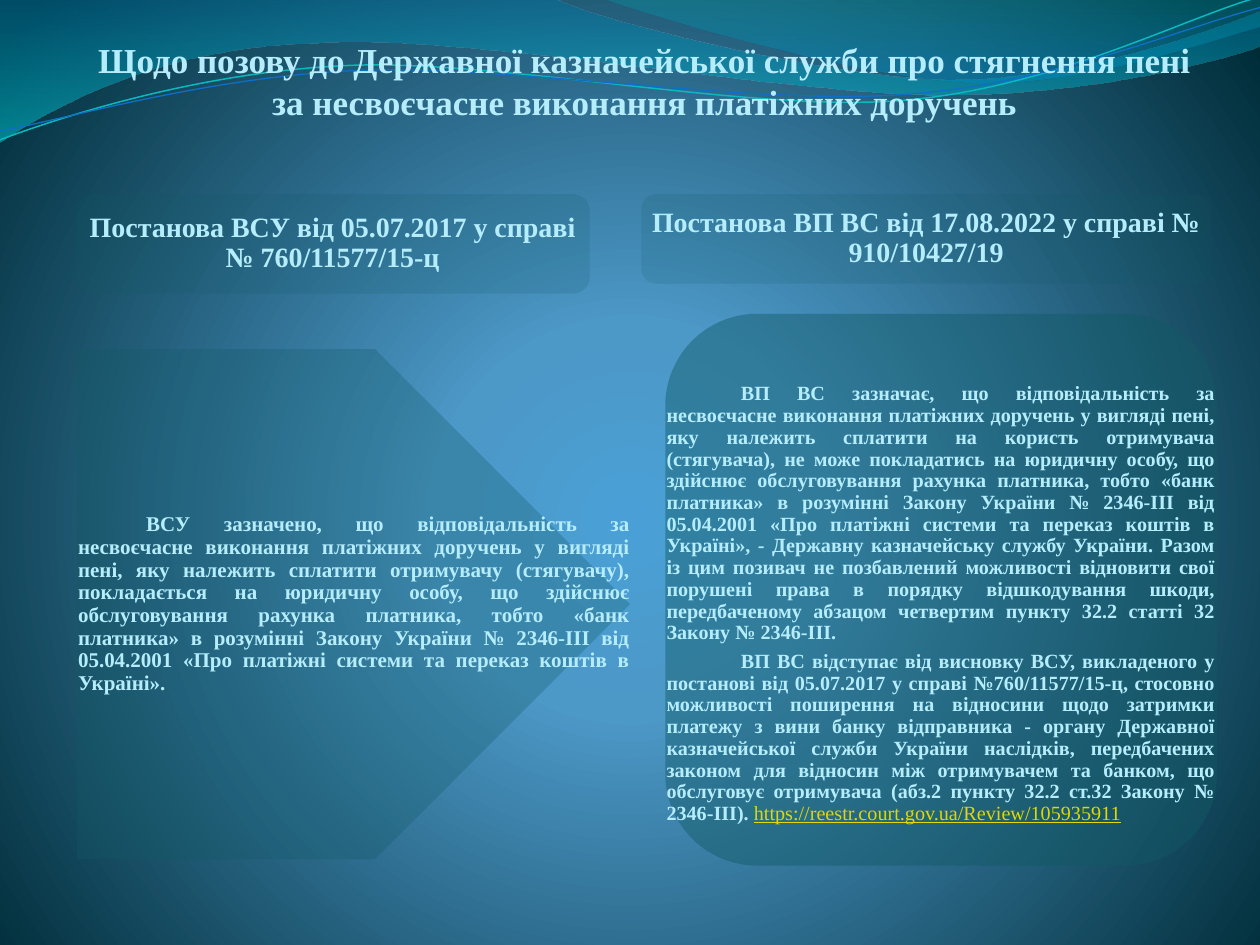
from lxml.etree import SubElement
from pptx import Presentation
from pptx.dml.color import RGBColor
from pptx.enum.shapes import MSO_SHAPE
from pptx.enum.text import MSO_ANCHOR, PP_ALIGN
from pptx.oxml.ns import qn
from pptx.util import Inches, Pt

FONT = "Times New Roman"
COLORS = {"text": "B5EDFD", "link": "E2D700", "panel": "115964",
          "teal_line": "0AB8BF", "blue_line": "0F6FC6"}

TITLE = ("Щодо позову до Державної казначейської служби про стягнення пені "
         "за несвоєчасне виконання платіжних доручень")
HEADERS = [
    ("Постанова ВСУ від 05.07.2017 у справі № 760/11577/15-ц", (0.6, 1.54, 4.08, 0.79), 17),
    ("Постанова ВП ВС від 17.08.2022 у справі № 910/10427/19", (5.09, 1.54, 4.52, 0.71), 16),
]
OLD_POSITION = [[("\t", "text"), (
    "ВСУ зазначено, що відповідальність за несвоєчасне виконання платіжних доручень у вигляді "
    "пені, яку належить сплатити отримувачу (стягувачу), покладається на юридичну особу, що "
    "здійснює обслуговування рахунка платника, тобто «банк платника» в розумінні Закону України "
    "№ 2346-III від 05.04.2001 «Про платіжні системи та переказ коштів в Україні».", "text")]]
NEW_POSITION = [
    [("\t", "text"),
     ("ВП ВС зазначає, що відповідальність за несвоєчасне виконання платіжних доручень у вигляді "
      "пені, яку належить сплатити на користь отримувача (стягувача), не може покладатись на "
      "юридичну особу, що здійснює обслуговування рахунка платника, тобто «банк платника» в "
      "розумінні Закону України № 2346-III від 05.04.2001 «Про платіжні системи та переказ коштів "
      "в Україні», - Державну казначейську службу України. Разом із цим позивач не позбавлений "
      "можливості відновити свої порушені права в порядку відшкодування шкоди, передбаченому "
      "абзацом четвертим пункту 32.2 статті 32 Закону № 2346-III.", "text")],
    [("\tВП ВС відступає від висновку ВСУ, викладеного у постанові від 05.07.2017 у справі "
      "№760/11577/15-ц, стосовно можливості поширення на відносини щодо затримки платежу з вини "
      "банку відправника - органу Державної казначейської служби України наслідків, передбачених "
      "законом для відносин між отримувачем та банком, що обслуговує отримувача (абз.2 пункту "
      "32.2 ст.32 Закону № 2346-III). ", "text"),
     ("https://reestr.court.gov.ua/Review/105935911", "link")],
]
PANELS = [
    (OLD_POSITION, MSO_SHAPE.PENTAGON, (0.61, 2.77, 4.39, 4.05), 29,
     dict(size=12, tab=0.54, insets=(0.01, 0.01, 0, 0.01))),
    (NEW_POSITION, MSO_SHAPE.FLOWCHART_ALTERNATE_PROCESS, (5.28, 2.49, 4.38, 4.38), 44,
     dict(size=11.5, tab=0.59, insets=(0.01, 0.25, 0.02, 0.02))),
]

BACKGROUND = [(0, "4AA0D6", 100), (25, "4C98C7", 100), (100, "002C38", 100)]
WAVES = [
    ([(0, 0), (4.4, -0.01),
      (4.76, 0.17, 6.64, 0.63, 7.58, 0.63), (8.53, 0.63, 9.58, 0.26, 10, 0.09),
      (10.01, 0.36),
      (9.83, 0.44, 8.7, 0.76, 7.46, 0.75), (6.22, 0.75, 3.82, 0.28, 2.57, 0.34),
      (1.29, 0.36, 0.46, 0.83, -0.01, 1.13), (0, 0)],
     [(0, "0074A1", 45), (100, "00C6CF", 55)]),
    ([(4.79, -0.01),
      (5.09, 0.11, 6.82, 0.62, 7.69, 0.65), (8.56, 0.69, 9.61, 0.32, 10, 0.21),
      (10, 0), (4.79, -0.01)],
     [(0, "00A1A9", 30), (80, "008BBF", 45)]),
]
RIBBONS = [
    ([(0, 1.11), (0.48, 0.93, 1.58, 0.57, 2.77, 0.52), (3.95, 0.47, 5.93, 0.89, 7.13, 0.8),
      (8.33, 0.71, 9.38, 0.15, 9.98, -0.02)], "teal_line", 0.85),
    ([(0, 1.04), (0.47, 0.96, 1.64, 0.61, 2.83, 0.56), (4.03, 0.51, 5.97, 0.84, 7.17, 0.75),
      (8.36, 0.67, 9.41, 0.21, 10, 0.06)], "blue_line", 0.75),
]


def rgb(name):
    return RGBColor.from_string(COLORS[name])


def set_alpha(color_element, percent):
    SubElement(color_element, qn("a:alpha"), val=str(percent * 1000))


def set_gradient(fill, stops, focus=None):
    fill.gradient()
    gradient = fill._xPr.find(qn("a:gradFill"))
    for child in list(gradient):
        gradient.remove(child)
    stop_list = SubElement(gradient, qn("a:gsLst"))
    for position, color, alpha in stops:
        stop = SubElement(stop_list, qn("a:gs"), pos=str(position * 1000))
        color_element = SubElement(stop, qn("a:srgbClr"), val=color)
        if alpha < 100:
            set_alpha(color_element, alpha)
    if focus:
        circle = SubElement(gradient, qn("a:path"), path="circle")
        SubElement(circle, qn("a:fillToRect"),
                   {side: str(value * 1000) for side, value in focus.items()})
    else:
        SubElement(gradient, qn("a:lin"), ang="5400000", scaled="0")


def add_curve(slide, steps, close):
    points = [(Inches(x), Inches(y)) for step in steps for x, y in zip(step[::2], step[1::2])]
    builder = slide.shapes.build_freeform(*points[0])
    builder.add_line_segments(points[1:], close=close)
    curve = builder.convert_to_shape()
    curve.shadow.inherit = False
    segments = iter(list(curve._element.iter(qn("a:lnTo"))))
    for step in steps[1:]:
        first = next(segments)
        if len(step) == 6:
            outline = first.getparent()
            bezier = outline.makeelement(qn("a:cubicBezTo"))
            outline.replace(first, bezier)
            bezier.append(first[0])
            for _ in range(2):
                control = next(segments)
                bezier.append(control[0])
                outline.remove(control)
    return curve


def add_panel(slide, kind, box, alpha):
    panel = slide.shapes.add_shape(kind, *map(Inches, box))
    panel.shadow.inherit = False
    panel.line.fill.background()
    panel.fill.solid()
    panel.fill.fore_color.rgb = rgb("panel")
    set_alpha(panel.fill._xPr.find(qn("a:solidFill"))[0], alpha)
    return panel


def write_text(frame, paragraphs, size, align=PP_ALIGN.CENTER, anchor=MSO_ANCHOR.MIDDLE,
               insets=(0.03, 0.03, 0.03, 0.03), spacing=0.9, after=0, tab=None):
    frame.word_wrap = True
    frame.vertical_anchor = anchor
    frame.margin_left, frame.margin_top, frame.margin_right, frame.margin_bottom = map(Inches, insets)
    for index, runs in enumerate(paragraphs):
        paragraph = frame.add_paragraph() if index else frame.paragraphs[0]
        paragraph.alignment = align
        paragraph.line_spacing = spacing
        paragraph.space_before = Pt(0)
        paragraph.space_after = Pt(after)
        if tab:
            tabs = SubElement(paragraph._p.get_or_add_pPr(), qn("a:tabLst"))
            SubElement(tabs, qn("a:tab"), pos=str(Inches(tab)), algn="l")
        for text, color in runs:
            run = paragraph.add_run()
            run.text = text
            run.font.name = FONT
            run.font.size = Pt(size)
            run.font.bold = color != "link"
            run.font.underline = color == "link"
            run.font.color.rgb = rgb(color)


def main():
    deck = Presentation()
    deck.slide_width, deck.slide_height = Inches(10), Inches(7.5)
    slide = deck.slides.add_slide(deck.slide_layouts[5])
    set_gradient(slide.background.fill, BACKGROUND, dict(l=10, t=110, r=10, b=100))

    for steps, stops in WAVES:
        wave = add_curve(slide, steps, True)
        wave.line.fill.background()
        set_gradient(wave.fill, stops)
    for steps, color, width in RIBBONS:
        ribbon = add_curve(slide, steps, False)
        ribbon.fill.background()
        ribbon.line.color.rgb = rgb(color)
        ribbon.line.width = Pt(width)

    title = slide.shapes.title
    title.left, title.top, title.width, title.height = map(Inches, (0.67, 0.36, 8.94, 0.94))
    write_text(title.text_frame, [[(TITLE, "text")]], size=20, anchor=MSO_ANCHOR.BOTTOM,
               insets=(0, 0, 0.05, 0.33), spacing=1)
    slide.shapes._spTree.append(title._element)

    for paragraphs, kind, box, alpha, style in PANELS:
        add_panel(slide, kind, box, alpha)
        body = slide.shapes.add_textbox(*map(Inches, box))
        write_text(body.text_frame, paragraphs, align=PP_ALIGN.JUSTIFY, after=4, **style)
    for text, box, alpha in HEADERS:
        header = add_panel(slide, MSO_SHAPE.ROUNDED_RECTANGLE, box, alpha)
        write_text(header.text_frame, [[(text, "text")]], size=16)

    deck.save("out.pptx")


if __name__ == "__main__":
    main()
